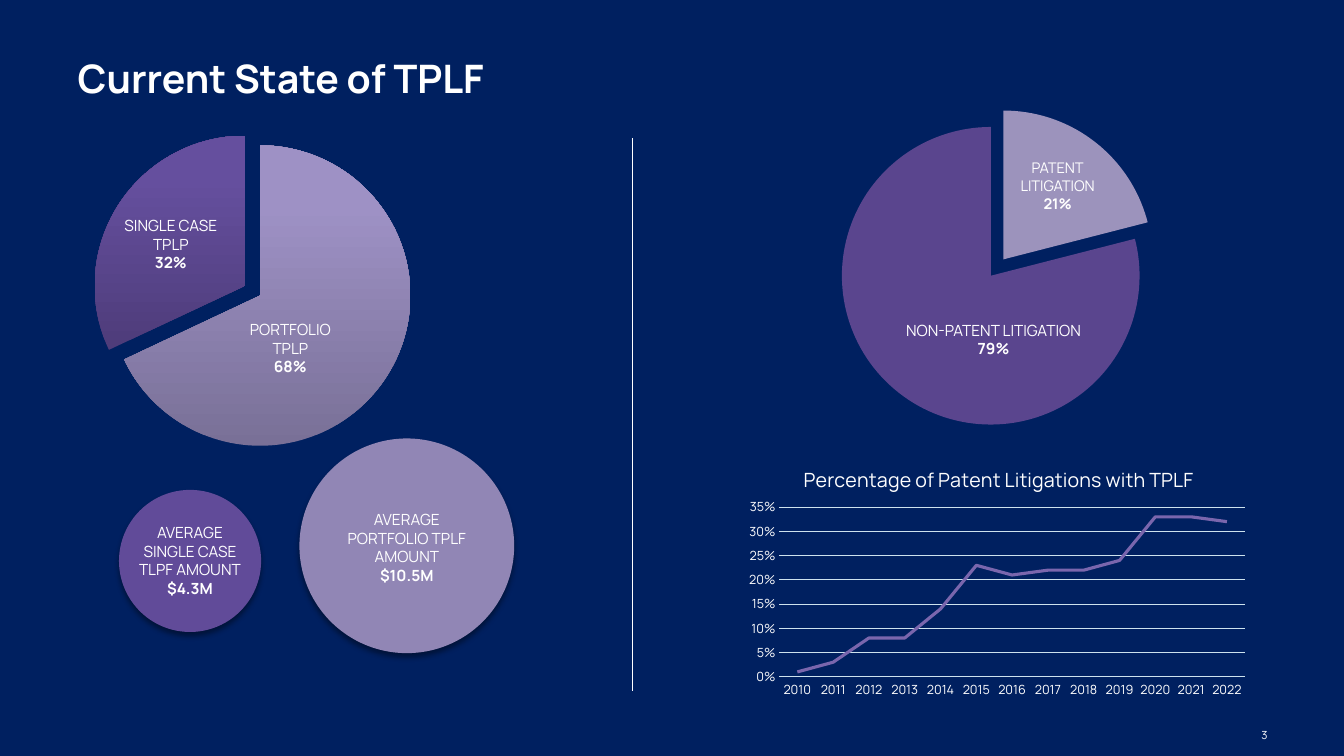
"""Build the slide on the current state of TPLF."""
import lxml.etree
import pptx
import pptx.chart.data
import pptx.dml.color
import pptx.enum.chart
import pptx.enum.shapes
import pptx.enum.text
import pptx.oxml
import pptx.oxml.ns
import pptx.util

Inches, Pt = pptx.util.Inches, pptx.util.Pt
ALIGN, ANCHOR = pptx.enum.text.PP_ALIGN, pptx.enum.text.MSO_ANCHOR
CHART_TYPE = pptx.enum.chart.XL_CHART_TYPE
NAMESPACES = pptx.oxml.ns.nsdecls("a", "c")


def color(hex_string):
    return pptx.dml.color.RGBColor.from_string(hex_string)


def set_font(font, **values):
    for name, value in {"name": "Manrope", "bold": False, **values}.items():
        setattr(font, name, value)
    font.color.rgb = color("FFFFFF")


presentation = pptx.Presentation()
presentation.slide_width, presentation.slide_height = Inches(13.33), Inches(7.5)
slide = presentation.slides.add_slide(presentation.slide_layouts[5])
slide.background.fill.solid()
slide.background.fill.fore_color.rgb = color("002060")

title = slide.shapes.title
title_format = {"left": Inches(0.67), "top": Inches(0.46), "width": Inches(12), "height": Inches(0.62)}
for name, value in title_format.items():
    setattr(title, name, value)
title.text_frame.text = "Current State of TPLF"
title.text_frame.vertical_anchor = ANCHOR.MIDDLE
title.text_frame.paragraphs[0].alignment = ALIGN.LEFT
set_font(title.text_frame.paragraphs[0].font, size=Pt(28), bold=True)

PIE_SIDE = 3.16
pies = [
    ((0.65, 1.17, 3.71, 3.43), (0.68, 0.32), 6, (("797097", "9E91C5"), ("4E3C7A", "654F9E"))),
    ((7.79, 0.94, 4.2, 3.43), (0.21, 0.79), 7, (("9C93BC",), ("5A458E",))),
]
trend_values = (0.01, 0.03, 0.08, 0.08, 0.14, 0.23, 0.21, 0.22, 0.22, 0.24, 0.33, 0.33, 0.32)
trend_box = (7.32, 4.41, 5.13, 2.59)
chart_rows = [(CHART_TYPE.PIE, box, ("1", "2"), values) for box, values, _, _ in pies]
chart_rows.append((CHART_TYPE.LINE, trend_box, [str(year) for year in range(2010, 2023)], trend_values))

charts = []
for chart_type, box, categories, values in chart_rows:
    chart_data = pptx.chart.data.CategoryChartData(number_format="0%")
    chart_data.categories = categories
    chart_data.add_series("Series 1", values)
    chart = slide.shapes.add_chart(chart_type, *map(Inches, box), chart_data).chart
    chart.has_legend = False
    chart.has_title = False
    set_font(chart.font, size=Pt(10))
    width, height = box[2:]
    if chart_type == CHART_TYPE.PIE:
        plot = ((1 - PIE_SIDE / width) / 2, (1 - PIE_SIDE / height) / 2, PIE_SIDE / width, PIE_SIDE / height)
    else:
        plot = (0.08, 0.24, 0.9, 0.65)
    plot_area = chart.plots[0]._element.getparent()
    for old_layout in plot_area.findall(pptx.oxml.ns.qn("c:layout")):
        plot_area.remove(old_layout)
    places = "".join(f'<c:{tag} val="{value:.4f}"/>' for tag, value in zip("xywh", plot))
    plot_area.insert(0, pptx.oxml.parse_xml(
        f'<c:layout {NAMESPACES}><c:manualLayout><c:layoutTarget val="inner"/>'
        f'<c:xMode val="edge"/><c:yMode val="edge"/>{places}</c:manualLayout></c:layout>'))
    charts.append(chart)

for chart, (_, _, explosion, slice_colors) in zip(charts, pies):
    chart.plots[0].vary_by_categories = False
    series = chart.plots[0].series[0]
    for index, colors in enumerate(slice_colors):
        slice_format = series.points[index].format
        slice_format.line.fill.background()
        if len(colors) == 1:
            slice_format.fill.solid()
            slice_format.fill.fore_color.rgb = color(colors[0])
            continue
        slice_format.fill.gradient()
        slice_format.fill.gradient_angle = 90
        for stop, position, shade in zip(slice_format.fill.gradient_stops, (0, 0.8), colors):
            stop.position = position
            stop.color.rgb = color(shade)
    first_point = series._element.find(pptx.oxml.ns.qn("c:dPt"))
    first_point.addprevious(pptx.oxml.parse_xml(f'<c:explosion {NAMESPACES} val="{explosion}"/>'))

trend = charts[-1]
trend.plots[0].vary_by_categories = False
trend_series = trend.plots[0].series[0]
trend_series.smooth = False
trend_series.marker.style = pptx.enum.chart.XL_MARKER_STYLE.NONE
trend_series.format.line.color.rgb = color("7A66AD")
trend_series.format.line.width = Pt(2.25)
for axis in (trend.category_axis, trend.value_axis):
    axis.major_tick_mark = axis.minor_tick_mark = pptx.enum.chart.XL_TICK_MARK.NONE
    set_font(axis.tick_labels.font, size=Pt(9))
value_axis_format = {"minimum_scale": 0, "maximum_scale": 0.35, "major_unit": 0.05, "has_major_gridlines": True}
for name, value in value_axis_format.items():
    setattr(trend.value_axis, name, value)
trend.value_axis.tick_labels.number_format = "0%"
trend.value_axis.tick_labels.number_format_is_linked = False
trend.value_axis.format.line.fill.background()
for line in (trend.category_axis.format.line, trend.value_axis.major_gridlines.format.line):
    line.color.rgb = color("CDE2EE")
    line.width = Pt(0.75)
trend.has_title = True
trend_title = trend.chart_title
trend_title.include_in_layout = False
trend_title.text_frame.text = "Percentage of Patent Litigations with TPLF"
set_font(trend_title.text_frame.paragraphs[0].runs[0].font, size=Pt(14))
for old_layout in trend_title._element.findall(pptx.oxml.ns.qn("c:layout")):
    trend_title._element.remove(old_layout)
trend_title._element.find(pptx.oxml.ns.qn("c:tx")).addnext(pptx.oxml.parse_xml(
    f'<c:layout {NAMESPACES}><c:manualLayout><c:xMode val="edge"/><c:yMode val="edge"/>'
    '<c:x val="0.12"/><c:y val="0.06"/></c:manualLayout></c:layout>'))

for left, top, diameter, fill in ((1.18, 4.86, 1.41, "614B99"), (2.97, 4.35, 2.13, "9186B5")):
    circle = slide.shapes.add_shape(
        pptx.enum.shapes.MSO_SHAPE.OVAL, *map(Inches, (left, top, diameter, diameter)))
    circle.fill.solid()
    circle.fill.fore_color.rgb = color(fill)
    circle.line.fill.background()
    circle.shadow.inherit = False
    effects = circle._element.spPr.find(pptx.oxml.ns.qn("a:effectLst"))
    effects.append(pptx.oxml.parse_xml(
        f'<a:outerShdw {NAMESPACES} blurRad="{Pt(4)}" dist="{Pt(3)}" dir="5400000" rotWithShape="0">'
        '<a:srgbClr val="000000"><a:alpha val="40000"/></a:srgbClr></a:outerShdw>'))

labels = [
    ((1.79, 3.13, 2.18, 0.77), "PORTFOLIO\nTPLP", "68%", 11, ANCHOR.TOP),
    ((0.77, 2.1, 1.85, 0.77), "SINGLE CASE\nTPLP", "32%", 11, ANCHOR.TOP),
    ((1.11, 5.14, 1.55, 0.84), "AVERAGE\nSINGLE CASE\nTLPF AMOUNT", "$4.3M", 11, ANCHOR.MIDDLE),
    ((3.19, 5.01, 1.69, 0.84), "AVERAGE\nPORTFOLIO TPLF AMOUNT", "$10.5M", 11, ANCHOR.MIDDLE),
    ((8.39, 3.13, 2.93, 0.47), "NON-PATENT LITIGATION", "79%", 11, ANCHOR.MIDDLE),
    ((9.4, 1.53, 2.18, 0.63), "PATENT\nLITIGATION", "21%", 10.5, ANCHOR.TOP),
    ((10.05, 7.18, 2.62, 0.24), "3", None, 8, ANCHOR.TOP),
]
for box, caption, amount, size, anchor in labels:
    text_frame = slide.shapes.add_textbox(*map(Inches, box)).text_frame
    text_frame.word_wrap = True
    text_frame.vertical_anchor = anchor
    paragraph = text_frame.paragraphs[0]
    paragraph.text = caption
    paragraph.alignment = ALIGN.CENTER if amount else ALIGN.RIGHT
    set_font(paragraph.font, size=Pt(size))
    if amount:
        paragraph = text_frame.add_paragraph()
        paragraph.text = amount
        paragraph.alignment = ALIGN.CENTER
        set_font(paragraph.font, size=Pt(size), bold=True)

divider = slide.shapes.add_connector(
    pptx.enum.shapes.MSO_CONNECTOR.STRAIGHT, *map(Inches, (6.27, 1.37, 6.27, 6.86)))
divider.line.color.rgb = color("FFFFFF")
divider.line.width = Pt(0.75)
lxml.etree.SubElement(divider._element.spPr, pptx.oxml.ns.qn("a:effectLst"))

presentation.save("out.pptx")
